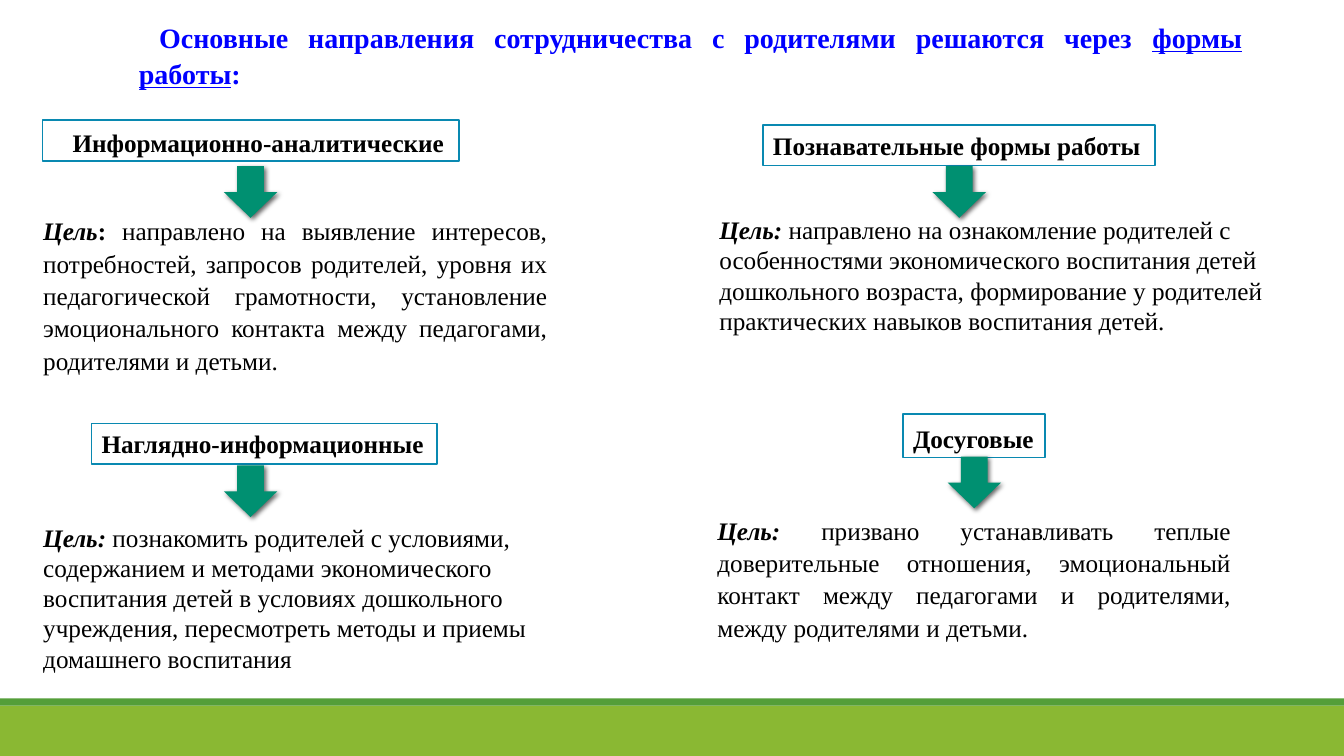
from dataclasses import dataclass

from lxml import etree
from pptx import Presentation, util as u
from pptx.dml.color import RGBColor
from pptx.enum import shapes, text
from pptx.oxml import ns

FONT = "Times New Roman"
BLACK, WHITE, BLUE = "000000", "FFFFFF", "0000FF"
BORDER, ARROW = "0989B1", "009071"
SLIDE_W, SLIDE_H = 33.87, 19.05
ARROW_W, ARROW_H = 1.35, 1.3
FIRST_LINE = 0.51
LEFT, JUSTIFY = text.PP_ALIGN.LEFT, text.PP_ALIGN.JUSTIFY


@dataclass
class Box:
    """Position and size in centimetres."""
    left: float
    top: float
    width: float
    height: float

    def lengths(self) -> list:
        return [u.Cm(v) for v in (self.left, self.top, self.width, self.height)]


@dataclass
class Piece:
    words: str
    bold: bool = False
    italic: bool = False
    underline: bool = False


@dataclass
class Layout:
    align: text.PP_ALIGN = LEFT
    spacing: float = 1.0
    first_line: float = 0
    after: float = 0


@dataclass
class Direction:
    heading: str
    heading_box: Box
    heading_layout: Layout
    goal: list[Piece]
    goal_box: Box
    goal_layout: Layout
    arrow_left: float
    arrow_top: float


PLAIN = Layout()
SPACED = Layout(JUSTIFY, 1.07)
INDENTED = Layout(JUSTIFY, 1.07, FIRST_LINE, 8)

TITLE = [
    Piece("Основные направления сотрудничества с родителями решаются через ", bold=True),
    Piece("формы работы", bold=True, underline=True),
    Piece(":", bold=True),
]

DIRECTIONS = [
    Direction(
        "Информационно-аналитические", Box(1.07, 3.02, 10.49, 1.04), INDENTED,
        [Piece("Цель", True, True), Piece(":", True),
         Piece(" направлено на выявление интересов, потребностей, запросов родителей, "
               "уровня их педагогической грамотности, установление эмоционального "
               "контакта между педагогами, родителями и детьми.")],
        Box(0.84, 5.26, 13.21, 4.37), SPACED, 5.64, 4.19),
    Direction(
        "Познавательные формы работы", Box(19.23, 3.15, 9.88, 1.02), PLAIN,
        [Piece("Цель:", True, True),
         Piece(" направлено на ознакомление родителей с особенностями экономического "
               "воспитания детей дошкольного возраста, формирование у родителей "
               "практических навыков воспитания детей.")],
        Box(17.88, 5.28, 15.24, 3.33), PLAIN, 23.5, 4.19),
    Direction(
        "Наглядно-информационные", Box(2.31, 10.67, 8.71, 1.02), PLAIN,
        [Piece("Цель:", True, True),
         Piece(" познакомить родителей с условиями, содержанием и методами "
               "экономического воспитания детей в условиях дошкольного учреждения, "
               "пересмотреть методы и приемы домашнего воспитания")],
        Box(0.84, 13.03, 15.01, 4.11), PLAIN, 5.64, 11.73),
    Direction(
        "Досуговые", Box(22.76, 10.44, 3.58, 1.09), Layout(JUSTIFY, 1.15),
        [Piece("Цель: ", True, True),
         Piece("призвано устанавливать теплые доверительные отношения, эмоциональный "
               "контакт между педагогами и родителями, между родителями и детьми.")],
        Box(17.83, 12.8, 13.44, 3.56), SPACED, 23.88, 11.51),
]


def color(value: str) -> RGBColor:
    return RGBColor.from_string(value)


def add_block(slide, kind, box: Box, fill: str, line: str | None = None):
    block = slide.shapes.add_shape(kind, *box.lengths())
    block.shadow.inherit = False
    block.fill.solid()
    block.fill.fore_color.rgb = color(fill)
    if line:
        block.line.color.rgb = color(line)
        block.line.width = u.Pt(1.25)
    else:
        block.line.fill.background()
    return block


def write(holder, pieces: list[Piece], layout: Layout, size: float = 18,
          ink: str = BLACK, wrap: bool = True) -> None:
    frame = holder.text_frame
    frame.word_wrap = wrap
    frame.auto_size = text.MSO_AUTO_SIZE.SHAPE_TO_FIT_TEXT
    frame.vertical_anchor = text.MSO_ANCHOR.TOP
    paragraph = frame.paragraphs[0]
    paragraph.alignment = layout.align
    paragraph.line_spacing = layout.spacing
    paragraph.space_after = u.Pt(layout.after)
    if layout.first_line:
        paragraph._p.get_or_add_pPr().set("indent", str(u.Cm(layout.first_line)))
    for piece in pieces:
        run = paragraph.add_run()
        run.text = piece.words
        run.font.name = FONT
        run.font.size = u.Pt(size)
        run.font.color.rgb = color(ink)
        run.font.bold = piece.bold
        run.font.italic = piece.italic
        run.font.underline = piece.underline


def cast_shadow(block) -> None:
    """Drop a soft shadow to the lower right."""
    effects = block._element.spPr.find(ns.qn("a:effectLst"))
    shadow = etree.SubElement(effects, ns.qn("a:outerShdw"), blurRad=str(u.Pt(3.5)),
                              dist=str(u.Pt(2)), dir="2700000", algn="tl")
    shade = etree.SubElement(shadow, ns.qn("a:srgbClr"), val=BLACK)
    etree.SubElement(shade, ns.qn("a:alpha"), val="60000")


def add_direction(slide, direction: Direction) -> None:
    heading = add_block(slide, shapes.MSO_SHAPE.RECTANGLE, direction.heading_box,
                        WHITE, BORDER)
    write(heading, [Piece(direction.heading, bold=True)], direction.heading_layout,
          wrap=False)
    goal = slide.shapes.add_textbox(*direction.goal_box.lengths())
    write(goal, direction.goal, direction.goal_layout)
    arrow_box = Box(direction.arrow_left, direction.arrow_top, ARROW_W, ARROW_H)
    cast_shadow(add_block(slide, shapes.MSO_SHAPE.DOWN_ARROW, arrow_box, ARROW))


def main() -> None:
    deck = Presentation()
    deck.slide_width, deck.slide_height = u.Cm(SLIDE_W), u.Cm(SLIDE_H)
    slide = deck.slides.add_slide(deck.slide_layouts[6])

    for top, height, fill in ((17.78, 1.27, "8AB833"), (17.6, 0.18, "549E39")):
        add_block(slide, shapes.MSO_SHAPE.RECTANGLE, Box(0, top, SLIDE_W, height), fill)

    title = slide.shapes.add_textbox(*Box(3.25, 0.33, 28.3, 2.03).lengths())
    write(title, TITLE, INDENTED, size=20, ink=BLUE)

    for direction in DIRECTIONS:
        add_direction(slide, direction)

    deck.save("out.pptx")


if __name__ == "__main__":
    main()
